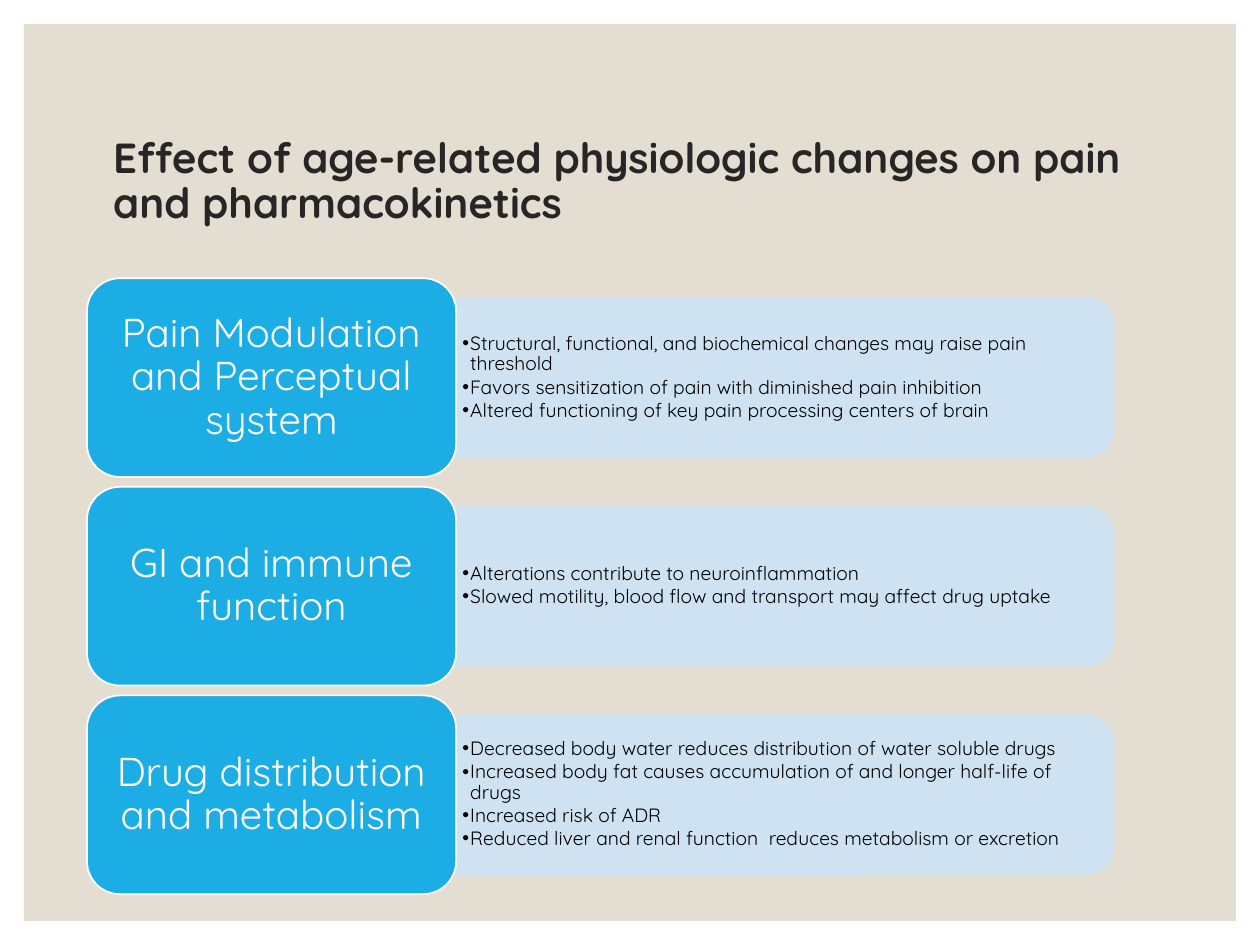
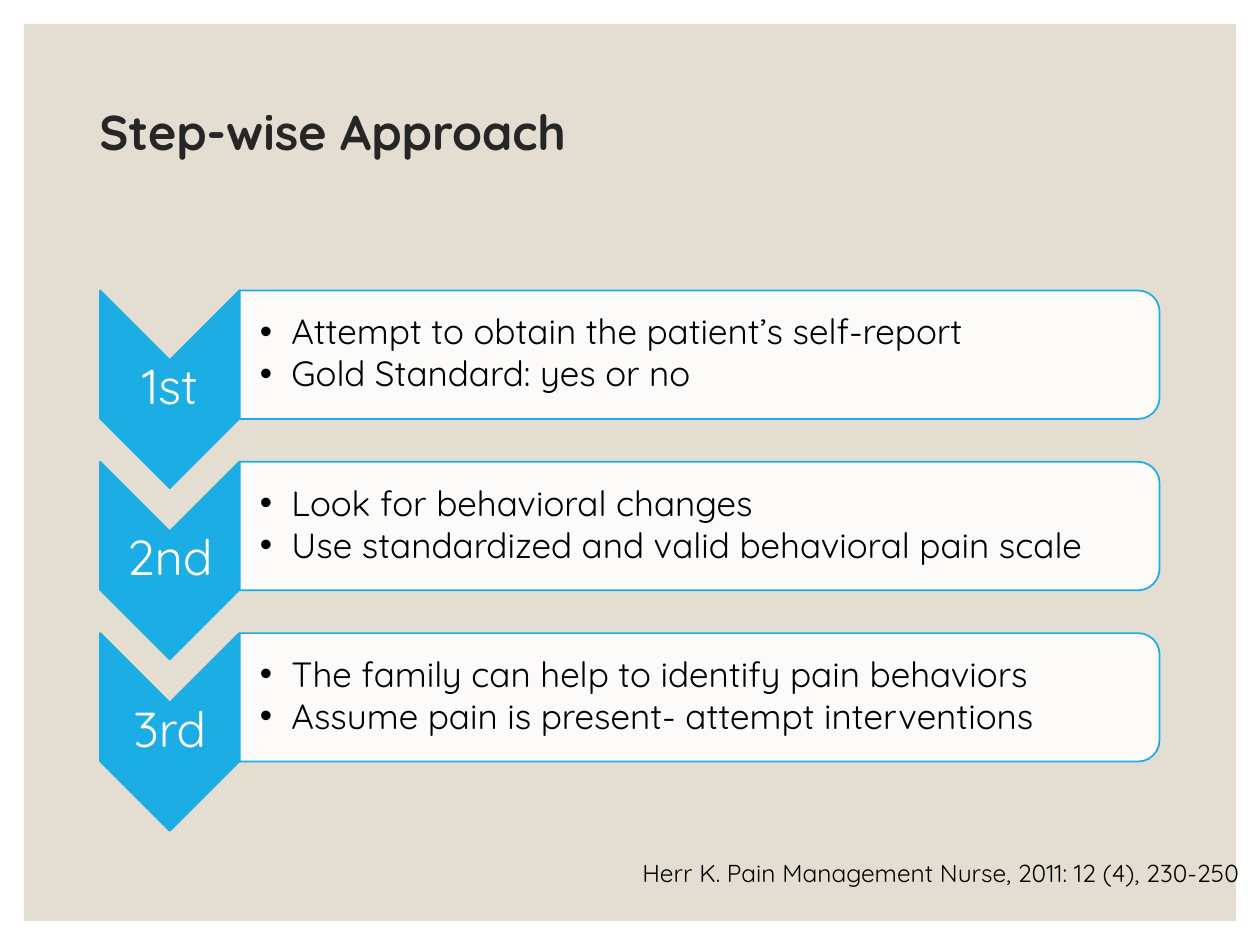
from dataclasses import dataclass

from lxml.etree import SubElement as Sub
from pptx import Presentation
from pptx.dml.color import RGBColor as Rgb
from pptx.enum.shapes import MSO_SHAPE as Kind
from pptx.enum.text import MSO_ANCHOR as Anchor, PP_ALIGN as Align
from pptx.oxml.ns import qn
from pptx.util import Pt


@dataclass(frozen=True)
class Theme:
    font: str = "Quicksand"
    sand: str = "E3DED1"
    blue: str = "1CADE4"
    pale: str = "CDE3F5"
    white: str = "FFFFFF"
    black: str = "000000"
    ink: str = "262626"
    body: float = 11
    note: float = 14
    step: float = 20
    topic: float = 23
    rank: float = 28


T = Theme()


def draw(slide, kind, box, fill, line=None, turn=False, alpha=None):
    """Draw a shape in its visible box; turn rotates it by 90 degrees."""
    x, y, w, h = box
    if turn:
        x, y, w, h = x + (w - h) / 2, y + (h - w) / 2, h, w
    shape = slide.shapes.add_shape(kind, Pt(x), Pt(y), Pt(w), Pt(h))
    shape.rotation = 90 if turn else 0
    shape.shadow.inherit = False
    shape.fill.solid()
    shape.fill.fore_color.rgb = Rgb.from_string(fill)
    if line:
        shape.line.color.rgb = Rgb.from_string(line)
        shape.line.width = Pt(1)
    else:
        shape.line.fill.background()
    if alpha:
        for tint in shape._element.spPr.iter(qn("a:srgbClr")):
            if tint.get("val") == fill:
                Sub(tint, qn("a:alpha"), val=str(alpha * 1000))
    return shape


def write(shape, lines, size, color, inset, align=Align.LEFT, indent=0,
          anchor=Anchor.MIDDLE, bold=False, space=0.9, wrap=True):
    """Fill a shape with text; an indent above zero makes bullets."""
    frame = shape.text_frame
    frame.text = "\n".join(lines)
    frame.word_wrap = wrap
    frame.vertical_anchor = anchor
    frame.margin_left, frame.margin_top, frame.margin_right, frame.margin_bottom = map(Pt, inset)
    for para in frame.paragraphs:
        para.alignment = align
        para.line_spacing = space
        if indent:
            para.space_after = Pt(round(size * 0.12, 1))
            props = para._p.get_or_add_pPr()
            props.set("marL", str(Pt(indent)))
            props.set("indent", str(-Pt(indent)))
            Sub(props, qn("a:buFont"), typeface="Arial")
            Sub(props, qn("a:buChar"), char="•")
        for run in para.runs:
            run.font.name = T.font
            run.font.size = Pt(size)
            run.font.bold = bold
            run.font.color.rgb = Rgb.from_string(color)


deck = Presentation()
deck.slide_width, deck.slide_height = Pt(720), Pt(540)

# Shared background and titles: text, size, box, top inset, anchor
heads = [
    ("Effect of age-related physiologic changes on pain and pharmacokinetics",
     24, (57.6, 50.4, 604.8, 108), 3.6, Anchor.MIDDLE),
    ("Step-wise Approach", 27.9, (49.7, 28.8, 620.6, 61.2), 33, Anchor.TOP),
]
slides = []
for head, size, box, top, anchor in heads:
    slide = deck.slides.add_slide(deck.slide_layouts[6])
    draw(slide, Kind.RECTANGLE, (13.7, 13.7, 692.6, 512.6), T.sand)
    title = slide.shapes.add_textbox(*map(Pt, box))
    write(title, [head], size, T.ink, (7.2, top, 7.2, 3.6), anchor=anchor, bold=True)
    slides.append(slide)
first, second = slides

# Slide 1: topics with their effects
topics = [
    ("Pain Modulation and Perceptual system", [
        "Structural, functional, and biochemical changes may raise pain threshold",
        "Favors sensitization of pain with diminished pain inhibition",
        "Altered functioning of key pain processing centers of brain"]),
    ("GI and immune function", [
        "Alterations contribute to neuroinflammation",
        "Slowed motility, blood flow and transport may affect drug uptake"]),
    ("Drug distribution and metabolism", [
        "Decreased body water reduces distribution of water soluble drugs",
        "Increased body fat causes accumulation of and longer half-life of drugs",
        "Increased risk of ADR",
        "Reduced liver and renal function  reduces metabolism or excretion"]),
]
for row, (topic, facts) in enumerate(topics):
    y = 159 + row * 119.2
    draw(first, Kind.ROUND_2_SAME_RECTANGLE, (261, y + 11.3, 375, 90.7),
         T.pale, T.pale, turn=True, alpha=90)
    text = first.shapes.add_textbox(Pt(260.6), Pt(y + 15.6), Pt(370.8), Pt(82))
    write(text, facts, T.body, T.black, (3.6, 1.4, 3.6, 1.4), indent=4.5)
    card = draw(first, Kind.ROUNDED_RECTANGLE, (49.7, y, 211, 113.6), T.blue, T.white)
    write(card, [topic], T.topic, T.white, (7.2, 3.6, 7.2, 3.6), Align.CENTER)

# Slide 2: ranked steps
steps = [
    ("1st", ["Attempt to obtain the patient’s self-report",
             "Gold Standard: yes or no"]),
    ("2nd", ["Look for behavioral changes",
             "Use standardized and valid behavioral pain scale"]),
    ("3rd", ["The family can help to identify pain behaviors",
             "Assume pain is present- attempt interventions"]),
]
for row, (rank, tasks) in enumerate(steps):
    y = 166 + row * 97.9
    draw(second, Kind.CHEVRON, (57.2, y, 79.6, 113), T.blue, T.blue, turn=True)
    label = second.shapes.add_textbox(Pt(57.4), Pt(y + 39.2), Pt(79.2), Pt(33.8))
    write(label, [rank], T.rank, T.white, (1.4, 1.4, 1.4, 1.4), Align.CENTER)
    draw(second, Kind.ROUND_2_SAME_RECTANGLE, (137, y, 525.6, 73.4),
         T.white, T.blue, turn=True, alpha=90)
    text = second.shapes.add_textbox(Pt(137), Pt(y + 3.4), Pt(522), Pt(66.2))
    write(text, tasks, T.step, T.black, (11.5, 0.7, 0.7, 0.7), indent=18)

# Slide 2: citation
cite = second.shapes.add_textbox(Pt(360), Pt(486.7), Pt(360), Pt(24.5))
write(cite, ["Herr K. Pain Management Nurse, 2011: 12 (4), 230-250"], T.note,
      T.black, (7.2, 3.6, 7.2, 3.6), anchor=Anchor.TOP, space=1.0, wrap=False)

deck.save("out.pptx")
